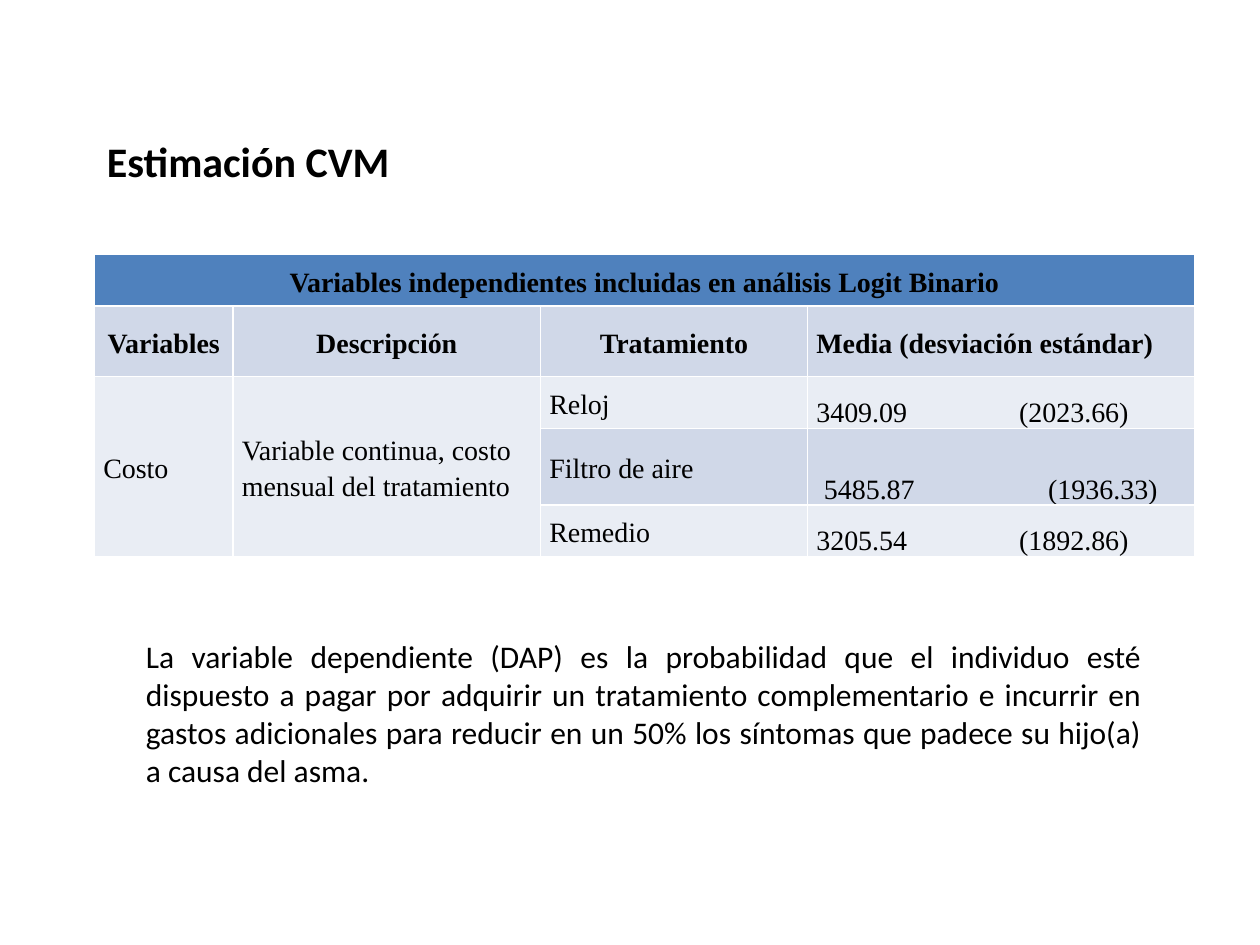
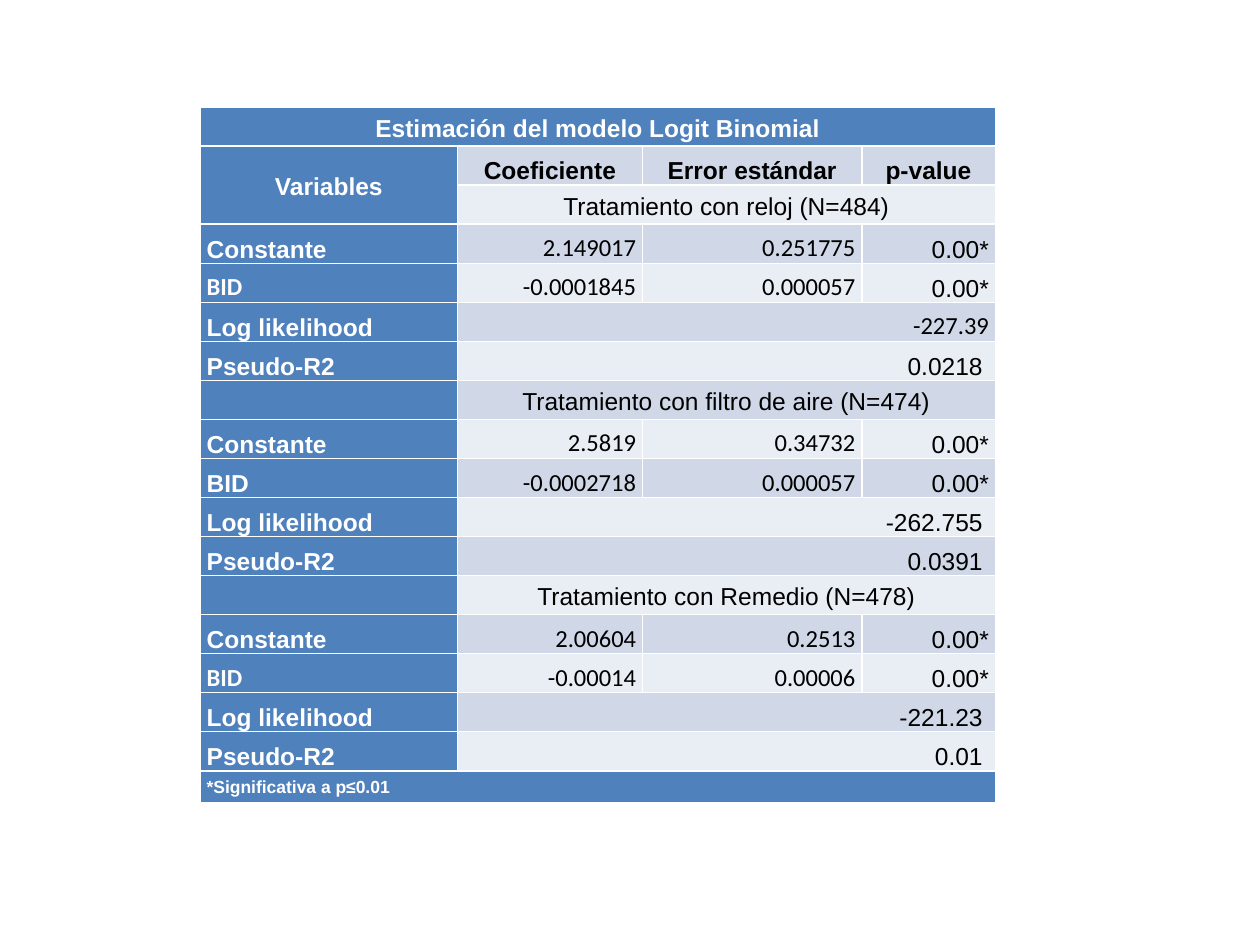
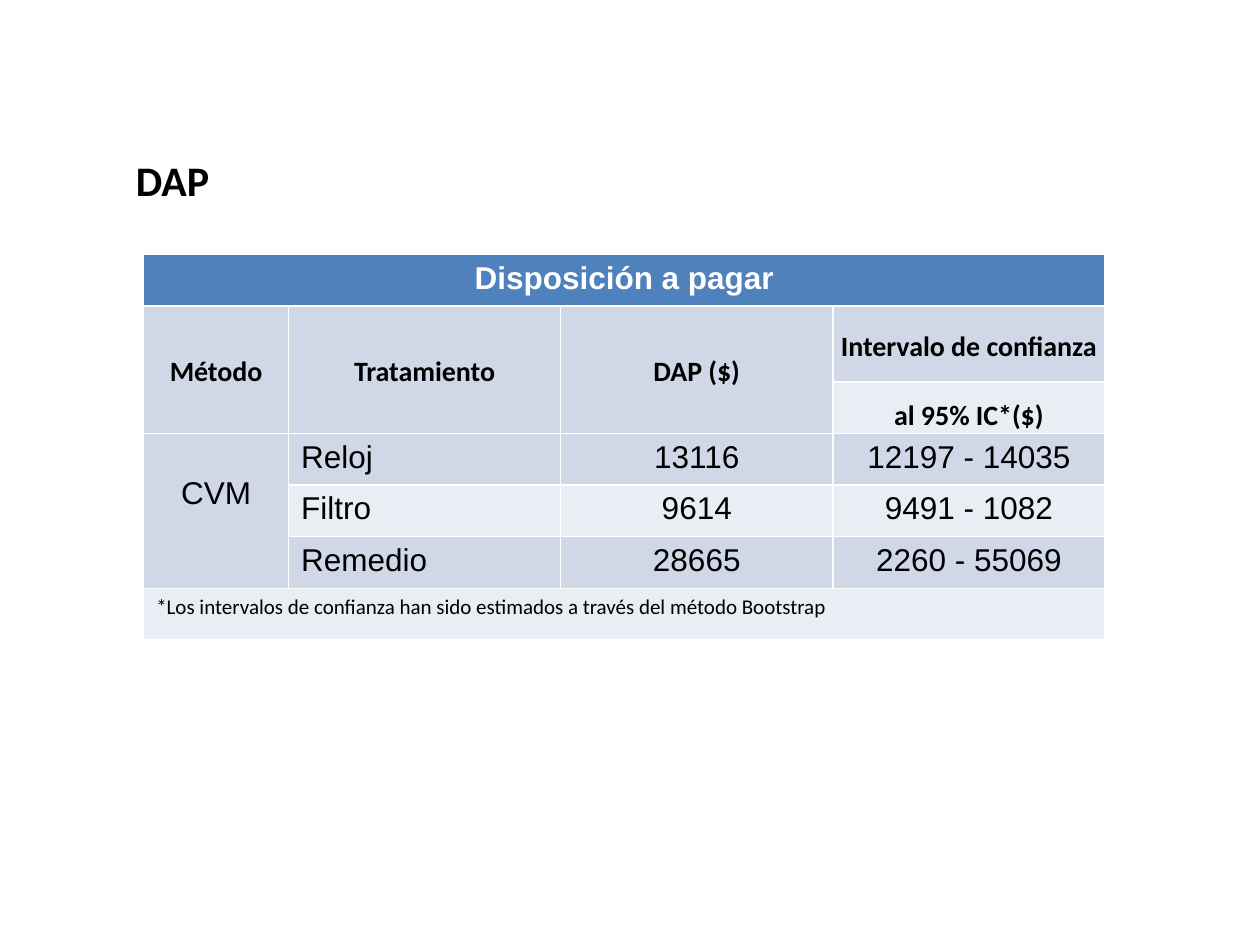
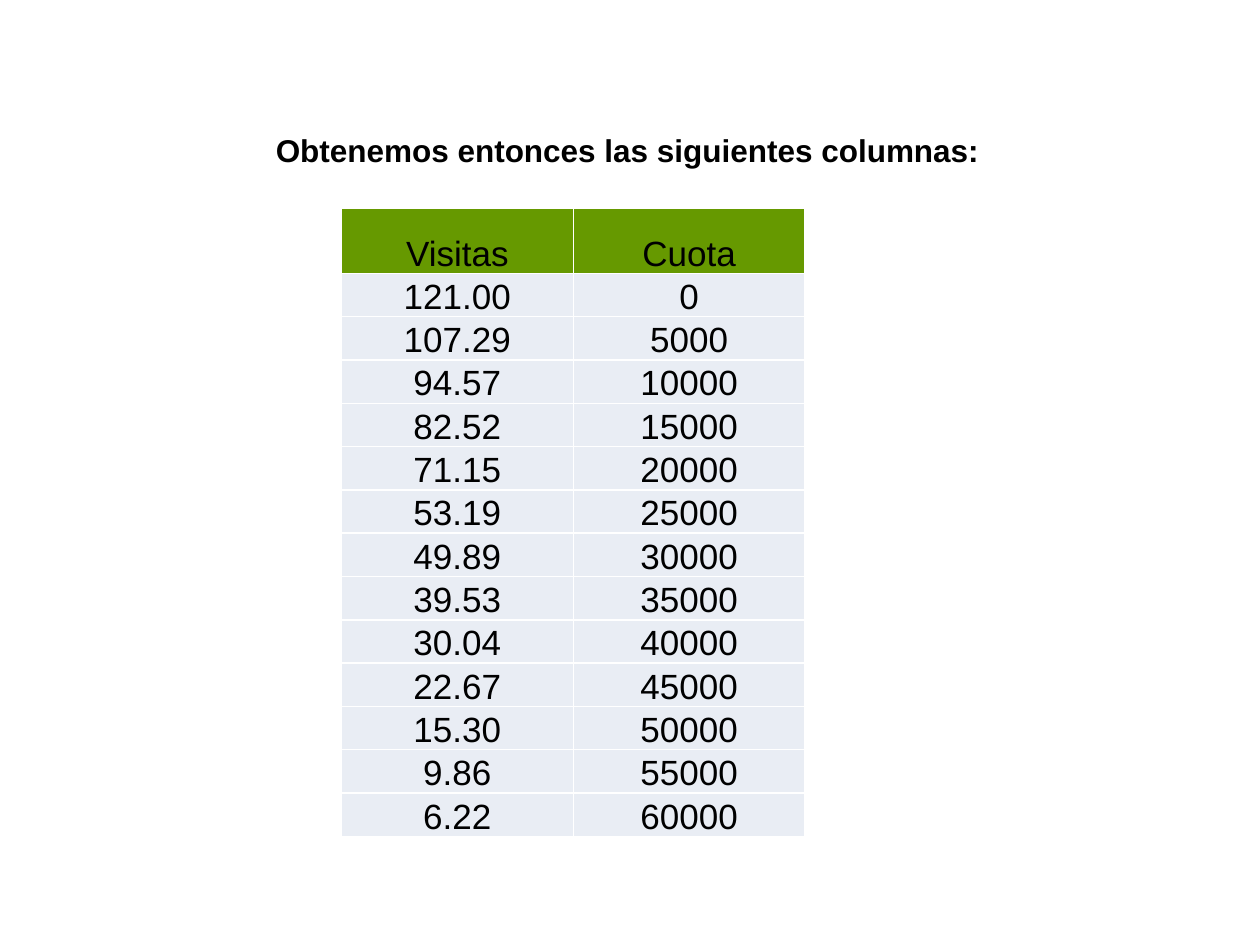
import pptx
import pptx.dml.color
import pptx.enum.text
import pptx.util
from lxml import etree

Inches = pptx.util.Inches
RGB = pptx.dml.color.RGBColor
ALIGN = pptx.enum.text.PP_ALIGN
ANCHOR = pptx.enum.text.MSO_ANCHOR

BLACK = RGB(0x00, 0x00, 0x00)
WHITE = RGB(0xFF, 0xFF, 0xFF)
BLUE = RGB(0x4F, 0x81, 0xBD)
DARK = RGB(0xD0, 0xD8, 0xE8)
LIGHT = RGB(0xE9, 0xED, 0xF4)
GREEN = RGB(0x66, 0x99, 0x00)


def style(frame, size=None, font=None, ink=None, bold=None, align=None,
          anchor=None, line=None):
    """Set only the given text properties on a text frame or table cell."""
    if anchor is not None:
        frame.vertical_anchor = anchor
    body = getattr(frame, "text_frame", frame)
    for para in body.paragraphs:
        if align is not None:
            para.alignment = align
        if line:
            para.line_spacing = line
        if size:
            para.font.size = pptx.util.Pt(size)
        if font:
            para.font.name = font
        if ink is not None:
            para.font.color.rgb = ink
        if bold is not None:
            para.font.bold = bold


def grid(page, left, top, cols, rows, data, pads, spans=(), **look):
    """Add a banded table; pads are left, top, right, bottom and spans are corner cells."""
    table = page.shapes.add_table(
        len(rows), len(cols), Inches(left), Inches(top),
        Inches(sum(cols)), Inches(sum(rows))).table
    table.horz_banding = False
    for col, width in zip(table.columns, cols):
        col.width = Inches(width)
    for r, (row, height) in enumerate(zip(table.rows, rows)):
        row.height = Inches(height)
        for c, cell in enumerate(row.cells):
            cell.text = data[r][c] if c < len(data[r]) else ""
            cell.fill.solid()
            cell.fill.fore_color.rgb = BLUE if r == 0 else DARK if r % 2 else LIGHT
            (cell.margin_left, cell.margin_top,
             cell.margin_right, cell.margin_bottom) = map(Inches, pads)
            style(cell, ink=BLACK, **look)
    for r, c, end, last in spans:
        table.cell(r, c).merge(table.cell(end, last))
    return table


deck = pptx.Presentation()
deck.slide_width = Inches(10)
deck.slide_height = Inches(7.5)
pages = [deck.slides.add_slide(deck.slide_layouts[6]) for _ in range(4)]

# Headings and running text
texts = [
    (0, 0.75, 0.84, 4.65, 0.87, "Estimación CVM",
     dict(size=24, font="Calibri", bold=True, anchor=ANCHOR.MIDDLE)),
    (2, 0.98, 0.99, 6.61, 0.87, "DAP",
     dict(size=24, font="Calibri", bold=True, anchor=ANCHOR.MIDDLE)),
    (3, 2.09, 0.99, 5.91, 0.4, "Obtenemos entonces las siguientes columnas:",
     dict(size=18, font="Arial", bold=True)),
    (0, 1.06, 5.01, 8.1, 1.31,
     "La variable dependiente (DAP) es la probabilidad que el individuo esté "
     "dispuesto a pagar por adquirir un tratamiento complementario e incurrir en "
     "gastos adicionales para reducir en un 50% los síntomas que padece su hijo(a) "
     "a causa del asma.",
     dict(size=18, font="Calibri", align=ALIGN.JUSTIFY)),
]
for page, left, top, width, height, words, look in texts:
    frame = pages[page].shapes.add_textbox(
        Inches(left), Inches(top), Inches(width), Inches(height)).text_frame
    frame.word_wrap = True
    frame.text = words
    style(frame, ink=BLACK, **look)

# Slide 1: independent variables
data = [
    ["Variables independientes incluidas en análisis Logit Binario"],
    ["Variables", "Descripción", "Tratamiento", "Media (desviación estándar)"],
    ["Costo", "Variable continua, costo\vmensual del tratamiento", "Reloj",
     "3409.09\t(2023.66)"],
    ["", "", "Filtro de aire", "5485.87\t(1936.33)"],
    ["", "", "Remedio", "3205.54\t(1892.86)"],
]
table = grid(pages[0], 0.75, 2.02, [1.1, 2.44, 2.12, 3.07],
             [0.41, 0.56, 0.41, 0.61, 0.41], data, (0.07, 0, 0.07, 0),
             [(0, 0, 0, 3), (2, 0, 4, 0), (2, 1, 4, 1)],
             size=16, font="Times New Roman", bold=False,
             anchor=ANCHOR.MIDDLE, line=1.15)
style(table.cell(0, 0), bold=True, align=ALIGN.CENTER)
for c in range(4):
    style(table.cell(1, c), bold=True, align=ALIGN.LEFT if c == 3 else ALIGN.CENTER)
for r, stop in zip(range(2, 5), (1.61, 1.78, 1.61)):
    cell = table.cell(r, 3)
    cell.vertical_anchor = ANCHOR.BOTTOM
    props = cell.text_frame.paragraphs[0].font._element.getparent()
    tabs = etree.Element(pptx.oxml.ns.qn("a:tabLst"))
    etree.SubElement(tabs, pptx.oxml.ns.qn("a:tab"), pos=str(Inches(stop)), algn="l")
    props.insert(len(props) - 1, tabs)
table.cell(3, 3).margin_left = Inches(0.13)

# Slide 2: logit model
blocks = [
    ("Tratamiento con reloj (N=484)", "2.149017", "0.251775",
     "-0.0001845", "0.000057", "-227.39", "0.0218"),
    ("Tratamiento con filtro de aire (N=474)", "2.5819", "0.34732",
     "-0.0002718", "0.000057", "-262.755", "0.0391"),
    ("Tratamiento con Remedio (N=478)", "2.00604", "0.2513",
     "-0.00014", "0.00006", "-221.23", "0.01"),
]
data = [["Estimación del modelo Logit Binomial"],
        ["Variables", "Coeficiente", "Error estándar", "p-value"]]
spans = [(0, 0, 0, 3), (1, 0, 2, 0), (17, 0, 17, 3)]
for name, base, fault, bid, slip, fit, pseudo in blocks:
    first = len(data)
    data += [["", name], ["Constante", base, fault, "0.00*"],
             ["BID", bid, slip, "0.00*"], ["Log likelihood", fit],
             ["Pseudo-R2", pseudo]]
    spans += [(first + k, 1, first + k, 3) for k in (0, 3, 4)]
data.append(["*Significativa a p≤0.01"])
table = grid(pages[1], 1.59, 0.85, [2.04, 1.47, 1.74, 1.06],
             [0.31] * 17 + [0.25], data, (0.05, 0, 0.05, 0), spans,
             size=14, font="Arial", bold=False, align=ALIGN.RIGHT,
             anchor=ANCHOR.BOTTOM, line=1.15)
for r in range(18):
    cell = table.cell(r, 0)
    cell.fill.fore_color.rgb = BLUE
    style(cell, ink=WHITE, bold=True, align=ALIGN.LEFT)
for r in (0, 1):
    style(table.cell(r, 0), align=ALIGN.CENTER, anchor=ANCHOR.MIDDLE)
style(table.cell(17, 0), size=10, anchor=ANCHOR.MIDDLE)
for c in (1, 2, 3):
    style(table.cell(1, c), bold=True, align=ALIGN.CENTER)
for first in (2, 7, 12):
    style(table.cell(first, 1), align=ALIGN.CENTER, anchor=ANCHOR.MIDDLE)
    for r in (first + 1, first + 2):
        for c in (1, 2):
            style(table.cell(r, c), font="Calibri")
    for r in (first + 3, first + 4):
        table.cell(r, 1).margin_right = Inches(0.1)
for r, c in ((4, 0), (14, 0), (5, 1)):
    style(table.cell(r, c), font="Calibri")
table.cell(5, 1).margin_right = Inches(0.05)

# Slide 3: willingness to pay
data = [
    ["Disposición a pagar"],
    ["Método", "Tratamiento", "DAP ($)", "Intervalo de confianza"],
    ["", "", "", "al 95% IC*($)"],
    ["CVM", "Reloj", "13116", "12197 - 14035"],
    ["", "Filtro", "9614", "9491 - 1082"],
    ["", "Remedio", "28665", "2260 - 55069"],
    ["*Los intervalos de confianza han sido estimados a través del método Bootstrap"],
]
spans = [(0, 0, 0, 3), (3, 0, 5, 0), (6, 0, 6, 3)]
spans += [(1, c, 2, c) for c in range(3)]
table = grid(pages[2], 1.14, 2.02, [1.15] + [2.16] * 3, [0.41, 0.6] + [0.41] * 5,
             data, (0.1, 0.05, 0.1, 0.05), spans,
             size=18, font="Arial", bold=False, align=ALIGN.CENTER)
style(table.cell(0, 0), ink=WHITE, bold=True)
for r in (1, 2):
    for c in range(4):
        cell = table.cell(r, c)
        cell.margin_left = cell.margin_right = Inches(0.05)
        cell.margin_top = cell.margin_bottom = 0
        style(cell, size=16, font="Calibri", bold=True, line=1.15,
              anchor=ANCHOR.MIDDLE if r == 1 else ANCHOR.BOTTOM)
for r in (3, 4, 5):
    style(table.cell(r, 1), align=ALIGN.LEFT)
table.cell(3, 0).margin_top = Inches(0.34)
style(table.cell(6, 0), size=12, font="Calibri", align=ALIGN.LEFT)

# Slide 4: visits by fee
visits = ["121.00", "107.29", "94.57", "82.52", "71.15", "53.19", "49.89",
          "39.53", "30.04", "22.67", "15.30", "9.86", "6.22"]
data = [["Visitas", "Cuota"]]
data += [[visit, str(5000 * k)] for k, visit in enumerate(visits)]
table = grid(pages[3], 2.71, 1.65, [1.84] * 2, [0.52] + [4.47 / 13] * 13, data,
             (0.01, 0.01, 0.01, 0), size=20, font="Arial", bold=False,
             align=ALIGN.CENTER, anchor=ANCHOR.BOTTOM)
table.first_row = False
for r, row in enumerate(table.rows):
    for cell in row.cells:
        cell.fill.fore_color.rgb = LIGHT if r else GREEN

deck.save("out.pptx")
